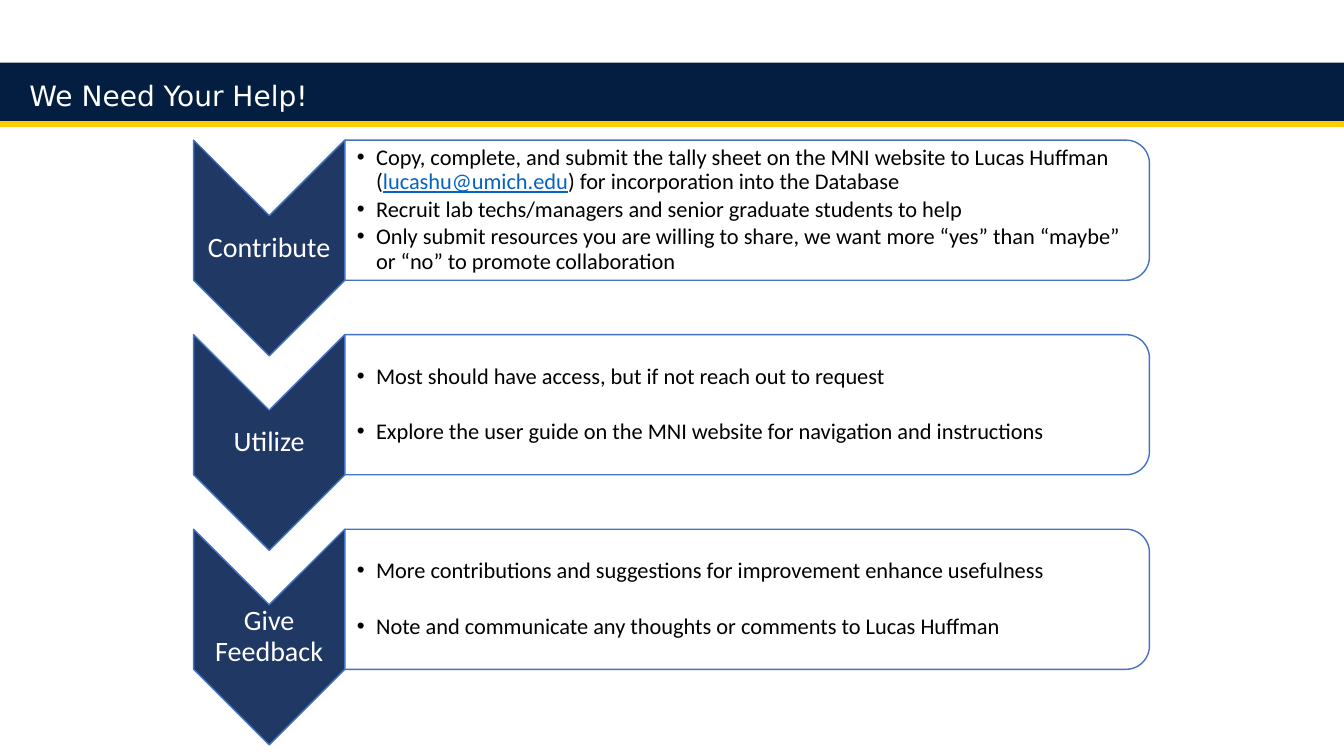
from lxml import etree
from pptx import Presentation
from pptx import util as u
from pptx.dml.color import RGBColor
from pptx.enum import shapes, text
from pptx.oxml import ns

COLORS = {
    "navy": "041E42", "gold": "FFCC02", "chevron": "203864", "outline": "4472C4",
    "white": "FFFFFF", "black": "000000", "link": "0563C1",
}
SLIDE_WIDTH, SLIDE_HEIGHT = 13.33, 7.5
CHEVRON_LEFT, CHEVRON_WIDTH, CHEVRON_HEIGHT = 1.92, 1.5, 2.14
PANEL_LEFT, PANEL_WIDTH, PANEL_HEIGHT = 3.42, 7.98, 1.39
FIRST_ROW, ROW_PITCH = 1.39, 1.93
INDENT = 0.19
EMAIL = "lucashu@umich.edu"

STEPS = [
    ("Contribute", 0, [
        "Copy, complete, and submit the tally sheet on the MNI website to Lucas Huffman "
        f"({EMAIL}) for incorporation into the Database",
        "Recruit lab techs/managers and senior graduate students to help",
        "Only submit resources you are willing to share, we want more “yes” than “maybe” "
        "or “no” to promote collaboration",
    ]),
    ("Utilize", 20, [
        "Most should have access, but if not reach out to request",
        "Explore the user guide on the MNI website for navigation and instructions",
    ]),
    ("Give Feedback", 20, [
        "More contributions and suggestions for improvement enhance usefulness",
        "Note and communicate any thoughts or comments to Lucas Huffman",
    ]),
]


def color(name):
    return RGBColor.from_string(COLORS[name])


def place(shape, left, top, width, height):
    shape.left, shape.top = u.Inches(left), u.Inches(top)
    shape.width, shape.height = u.Inches(width), u.Inches(height)


def set_font(font, name, size, color_name):
    font.name, font.size, font.bold = name, u.Pt(size), False
    font.color.rgb = color(color_name)


def set_frame(frame, left_inset, inset):
    frame.word_wrap = True
    frame.auto_size = text.MSO_AUTO_SIZE.NONE
    frame.vertical_anchor = text.MSO_ANCHOR.MIDDLE
    frame.margin_left = u.Inches(left_inset)
    frame.margin_right = frame.margin_top = frame.margin_bottom = u.Inches(inset)


def add_filled(slide, kind, box, fill, line, line_width):
    shape = slide.shapes.add_shape(kind, *(u.Inches(length) for length in box))
    shape.shadow.inherit = False
    shape.fill.solid()
    shape.fill.fore_color.rgb = color(fill)
    shape.line.color.rgb = color(line)
    shape.line.width = u.Pt(line_width)
    return shape


def add_turned(slide, kind, box, fill):
    """Add a shape turned a quarter clockwise so that it covers box."""
    left, top, width, height = box
    shift = (width - height) / 2
    shape = add_filled(slide, kind, (left + shift, top - shift, height, width),
                       fill, "outline", 1)
    shape.rotation = 90
    return shape


def set_transparency(shape, opacity):
    fill_color = shape.element.spPr.find(ns.qn("a:solidFill"))[0]
    etree.SubElement(fill_color, ns.qn("a:alpha")).set("val", str(opacity * 1000))


def set_title(slide, wording):
    title = slide.shapes.title
    place(title, 0, 0.62, SLIDE_WIDTH, 0.58)
    title.fill.solid()
    title.fill.fore_color.rgb = color("navy")
    set_frame(title.text_frame, 0.1 + INDENT, 0.05)
    title.text_frame.text = wording
    paragraph = title.text_frame.paragraphs[0]
    paragraph.alignment = text.PP_ALIGN.LEFT
    paragraph.line_spacing = 1.2
    paragraph.space_after = u.Pt(6)
    set_font(paragraph.font, "DejaVu Sans", 20, "white")


def add_label(slide, wording, row_top):
    label = slide.shapes.add_textbox(
        u.Inches(CHEVRON_LEFT), u.Inches(row_top + 0.75),
        u.Inches(CHEVRON_WIDTH), u.Inches(0.64))
    set_frame(label.text_frame, 0.01, 0.01)
    label.text_frame.text = wording
    paragraph = label.text_frame.paragraphs[0]
    paragraph.alignment = text.PP_ALIGN.CENTER
    paragraph.line_spacing = 0.9
    paragraph.space_after = u.Pt(7)
    set_font(paragraph.font, "Calibri", 20, "white")


def add_bullet(paragraph):
    properties = paragraph._p.get_or_add_pPr()
    properties.set("marL", str(u.Inches(INDENT)))
    properties.set("indent", str(-u.Inches(INDENT)))
    etree.SubElement(properties, ns.qn("a:buFont")).set("typeface", "Arial")
    etree.SubElement(properties, ns.qn("a:buChar")).set("char", "•")


def write_item(paragraph, item):
    """Write an item, with the e-mail address in link style."""
    before, address, after = item.partition(EMAIL)
    for part in filter(None, (before, address, after)):
        run = paragraph.add_run()
        run.text = part
        if part == EMAIL:
            run.font.color.rgb = color("link")
            run.font.underline = True


def fill_list(placeholder, items, gap, row_top):
    # Bring the list in front of its panel.
    placeholder.element.getparent().append(placeholder.element)
    place(placeholder, PANEL_LEFT, row_top + 0.07, PANEL_WIDTH - 0.06, PANEL_HEIGHT - 0.14)
    frame = placeholder.text_frame
    set_frame(frame, 0.12, 0.01)
    for number, item in enumerate(items):
        paragraph = frame.add_paragraph() if number else frame.paragraphs[0]
        add_bullet(paragraph)
        paragraph.alignment = text.PP_ALIGN.LEFT
        paragraph.line_spacing = 0.9
        paragraph.space_before = u.Pt(gap if number else 0)
        paragraph.space_after = u.Pt(2.4)
        set_font(paragraph.font, "Calibri", 16, "black")
        write_item(paragraph, item)


def add_step(slide, row, placeholder, label, gap, items):
    top = FIRST_ROW + row * ROW_PITCH
    add_turned(slide, shapes.MSO_SHAPE.CHEVRON,
               (CHEVRON_LEFT, top, CHEVRON_WIDTH, CHEVRON_HEIGHT), "chevron")
    add_label(slide, label, top)
    panel = add_turned(slide, shapes.MSO_SHAPE.ROUND_2_SAME_RECTANGLE,
                       (PANEL_LEFT, top, PANEL_WIDTH, PANEL_HEIGHT), "white")
    set_transparency(panel, 90)
    fill_list(placeholder, items, gap, top)


def main():
    presentation = Presentation()
    presentation.slide_width = u.Inches(SLIDE_WIDTH)
    presentation.slide_height = u.Inches(SLIDE_HEIGHT)
    comparison_layout = presentation.slide_layouts[4]
    slide = presentation.slides.add_slide(comparison_layout)
    set_title(slide, "We Need Your Help!")
    _, *bodies, spare = slide.placeholders
    spare.element.getparent().remove(spare.element)
    for row, (body, step) in enumerate(zip(bodies, STEPS)):
        add_step(slide, row, body, *step)
    add_filled(slide, shapes.MSO_SHAPE.RECTANGLE, (0, 1.21, SLIDE_WIDTH, 0.05),
               "gold", "gold", 0.75)
    presentation.save("out.pptx")


if __name__ == "__main__":
    main()
